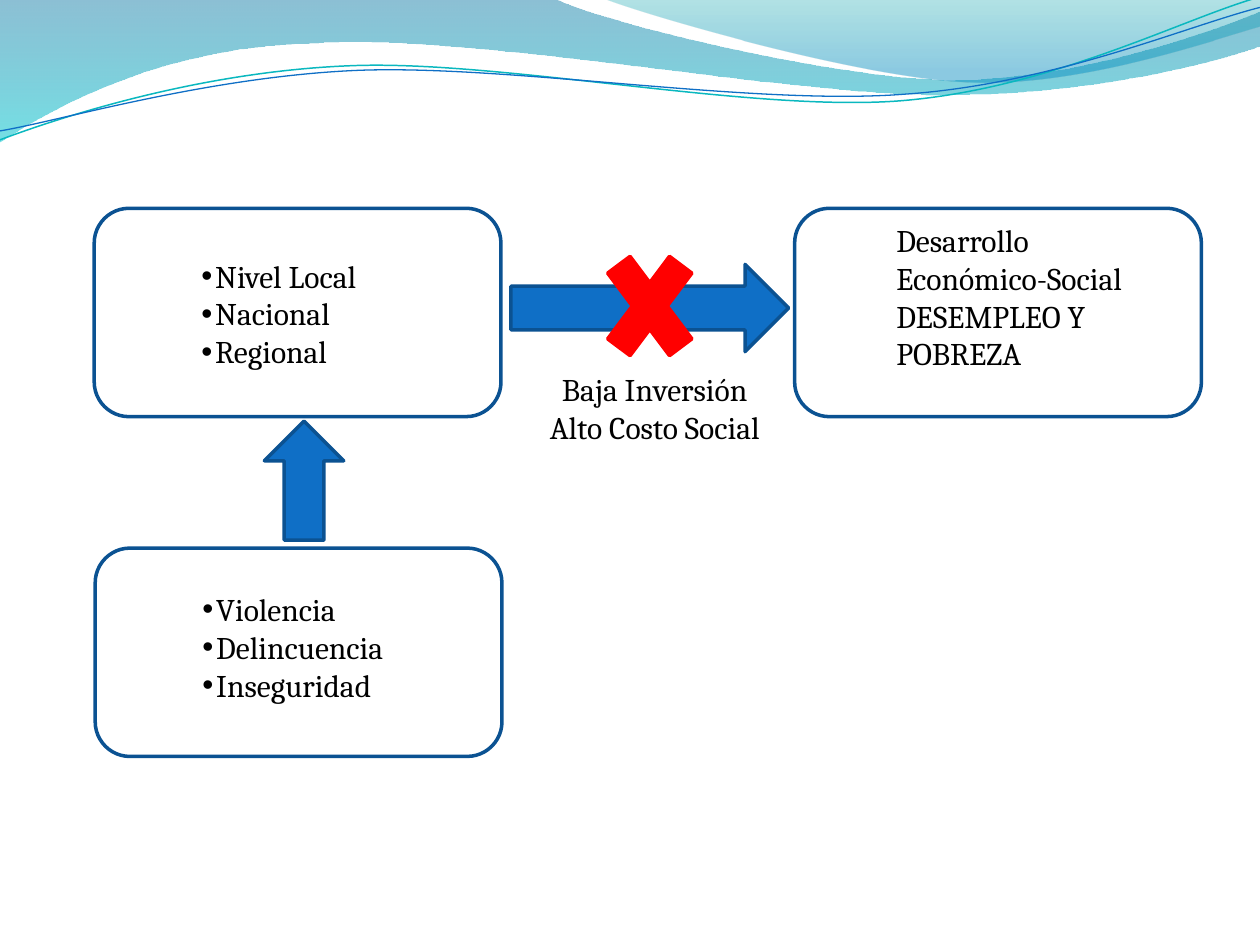
from lxml import etree
from pptx import Presentation
from pptx import util as u
from pptx.dml import color
from pptx.enum import shapes, text
from pptx.oxml import ns

BLUE, DARK_BLUE, RED, BLACK = "0F6FC6", "0B5292", "FF0000", "000000"

prs = Presentation()
prs.slide_width, prs.slide_height = u.Cm(25.4), u.Cm(19.05)
slide = prs.slides.add_slide(prs.slide_layouts[6])


def paint(target, hex_color):
    """Give a solid fill, line fill or font one colour."""
    if hasattr(target, "solid"):
        target.solid()
        target.fore_color.rgb = color.RGBColor.from_string(hex_color)
    else:
        target.color.rgb = color.RGBColor.from_string(hex_color)


def wave(start, segments, closed):
    """Draw a ribbon; six numbers are a cubic curve, two a straight line (cm)."""
    points = [(u.Cm(seg[i]), u.Cm(seg[i + 1]))
              for seg in segments for i in range(0, len(seg), 2)]
    builder = slide.shapes.build_freeform(u.Cm(start[0]), u.Cm(start[1]))
    builder.add_line_segments(points, close=closed)
    ribbon = builder.convert_to_shape()
    ribbon.shadow.inherit = False
    # Join each run of three line points into one curve
    knots = ribbon._element.spPr.iter(ns.qn("a:lnTo"))
    knots = iter(list(knots))
    for seg in segments:
        first = next(knots)
        if len(seg) == 6:
            first.tag = ns.qn("a:cubicBezTo")
            for _ in range(2):
                knot = next(knots)
                first.append(knot[0])
                knot.getparent().remove(knot)
    return ribbon


# Translucent waves along the top; stops are position, colour, opacity in percent
filled_waves = [
    ((0, 0),
     [(11.18, -0.03), (12.09, 0.43, 16.87, 1.6, 19.25, 1.6),
      (21.67, 1.6, 24.33, 0.66, 25.4, 0.23), (25.43, 0.91),
      (24.97, 1.12, 22.1, 1.93, 18.95, 1.91), (15.8, 1.91, 9.7, 0.71, 6.53, 0.86),
      (3.28, 0.91, 1.17, 2.11, -0.03, 2.87)],
     [(0, "0074A1", 45), (1, "00C6CF", 55)]),
    ((12.17, -0.03),
     [(12.93, 0.28, 17.32, 1.57, 19.53, 1.65), (21.74, 1.75, 24.41, 0.81, 25.4, 0.53),
      (25.4, 0)],
     [(0, "00A1A9", 30), (0.8, "008BBF", 45)]),
]
for start, segments, stops in filled_waves:
    ribbon = wave(start, segments, True)
    ribbon.line.fill.background()
    ribbon.fill.gradient()
    ribbon.fill.gradient_angle = 270
    for stop, (position, hex_color, _) in zip(ribbon.fill.gradient_stops, stops):
        stop.position = position
        paint(stop, hex_color)
    tints = ribbon._element.spPr.iter(ns.qn("a:srgbClr"))
    for tint, (_, _, opacity) in zip(tints, stops):
        etree.SubElement(tint, ns.qn("a:alpha"), val=str(opacity * 1000))

# Thin wave lines, tilted slightly upwards
wave_lines = [
    ((-0.05, 2.22), [(1.19, 1.82, 4.02, 1.04, 7.05, 1.06),
                     (10.05, 1.07, 15.02, 2.37, 18.08, 2.29),
                     (21.13, 2.2, 23.87, 0.91, 25.41, 0.55)], "0AB8BF", 0.85),
    ((-0.04, 2.04), [(1.16, 1.9, 4.18, 1.15, 7.2, 1.16),
                     (10.25, 1.18, 15.13, 2.25, 18.19, 2.16),
                     (21.21, 2.1, 23.93, 1.06, 25.45, 0.75)], BLUE, 0.75),
]
for start, segments, hex_color, width in wave_lines:
    ribbon = wave(start, segments, False)
    ribbon.rotation = 357.3
    ribbon.fill.background()
    paint(ribbon.line.fill, hex_color)
    ribbon.line.width = u.Pt(width)

# Boxes, arrows and the cross: preset, left, top, width, height, fill, line
preset = shapes.MSO_SHAPE
BOX = (8.2, 4.2)
diagram = [
    (preset.ROUNDED_RECTANGLE, 1.92, 11.05, *BOX, None, DARK_BLUE),
    (preset.ROUNDED_RECTANGLE, 1.9, 4.2, *BOX, None, DARK_BLUE),
    (preset.ROUNDED_RECTANGLE, 16.02, 4.2, *BOX, None, DARK_BLUE),
    (preset.UP_ARROW, 5.33, 8.49, 1.6, 2.4, BLUE, DARK_BLUE),
    (preset.RIGHT_ARROW, 10.3, 5.33, 5.6, 1.76, BLUE, DARK_BLUE),
    (preset.MATH_MULTIPLY, 11.9, 4.57, 2.4, 3.2, RED, RED),
]
for kind, left, top, width, height, fill, line in diagram:
    part = slide.shapes.add_shape(kind, u.Cm(left), u.Cm(top), u.Cm(width), u.Cm(height))
    part.shadow.inherit = False
    if fill:
        paint(part.fill, fill)
    else:
        part.fill.background()
    paint(part.line.fill, line)
    part.line.width = u.Pt(2)

# Wording: left, top, height, lines, bulleted, alignment
LEFT, CENTER = text.PP_ALIGN.LEFT, text.PP_ALIGN.CENTER
wording = [
    (3.32, 11.77, 2.57, ["Violencia", "Delincuencia", "Inseguridad"], True, LEFT),
    (3.3, 5.05, 2.57, ["Nivel Local", "Nacional", "Regional"], True, LEFT),
    (17.82, 4.33, 3.33, ["Desarrollo Económico-Social", "DESEMPLEO Y POBREZA"], False, LEFT),
    (10.5, 7.33, 1.8, ["Baja Inversión", "Alto Costo Social"], False, CENTER),
]
for left, top, height, lines, bulleted, alignment in wording:
    label = slide.shapes.add_textbox(u.Cm(left), u.Cm(top), u.Cm(5.4), u.Cm(height))
    frame = label.text_frame
    frame.word_wrap = True
    frame.auto_size = text.MSO_AUTO_SIZE.SHAPE_TO_FIT_TEXT
    frame.text = "\n".join(lines)
    for paragraph in frame.paragraphs:
        paragraph.alignment = alignment
        font = paragraph.runs[0].font
        font.name, font.size = "Cambria", u.Pt(18)
        paint(font, BLACK)
        if bulleted:
            props = paragraph._p.get_or_add_pPr()
            props.set("marL", str(u.Cm(0.79)))
            props.set("indent", str(u.Cm(-0.28)))
            etree.SubElement(props, ns.qn("a:buFont"), typeface="Arial")
            etree.SubElement(props, ns.qn("a:buChar"), char="•")

prs.save("out.pptx")
